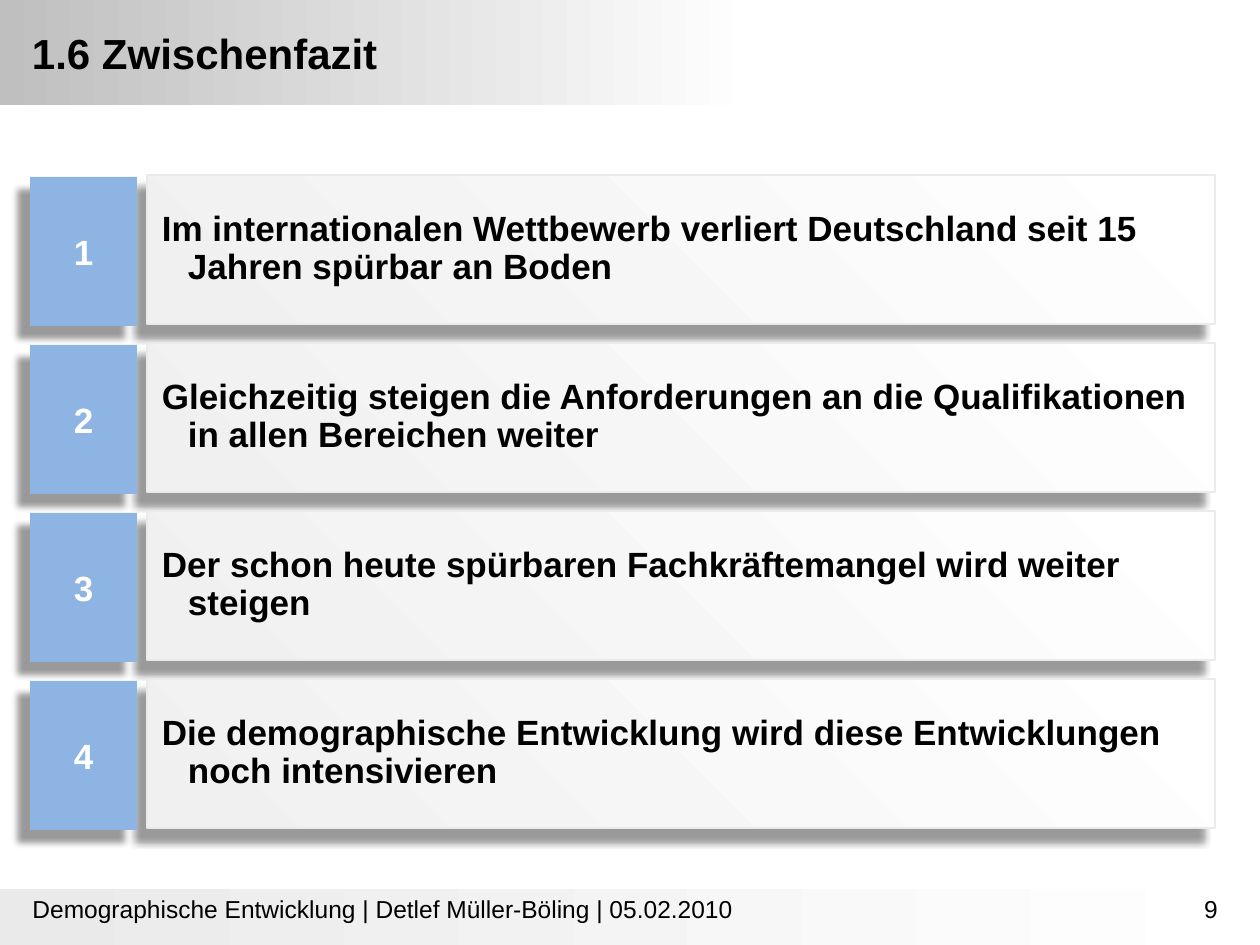
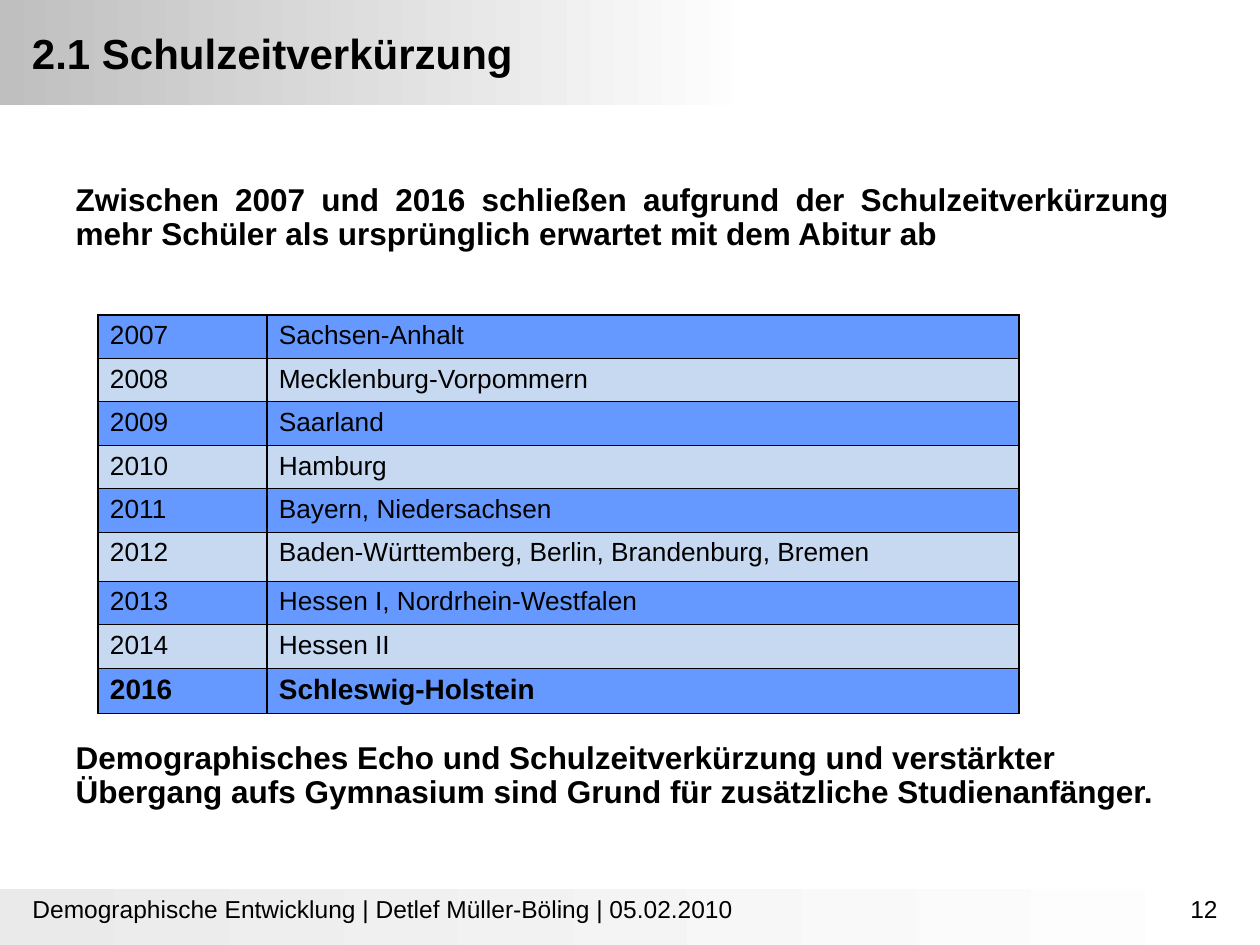
import pptx
import pptx.dml.color
import pptx.enum.shapes
import pptx.enum.text
import pptx.oxml
import pptx.oxml.ns
import pptx.util

EMU_PER_PX = 914400 / 126
FONT = "Arial"
COLORS = {
    "text": "000000",
    "white": "FFFFFF",
    "header": "BFBFBF",
    "footer": "EAEAEA",
    "panel": "F0F0F0",
    "panel_line": "EAEAEA",
    "badge": "8EB4E3",
    "row_dark": "6699FF",
    "row_light": "C6D9F1",
}
NAMESPACE = pptx.oxml.ns.nsdecls("a")
ALIGN = pptx.enum.text.PP_ALIGN
ANCHOR = pptx.enum.text.MSO_ANCHOR

FOOTER_TEXT = "Demographische Entwicklung | Detlef Müller-Böling | 05.02.2010"
CONCLUSIONS = [
    "Im internationalen Wettbewerb verliert Deutschland seit 15 Jahren spürbar an Boden",
    "Gleichzeitig steigen die Anforderungen an die Qualifikationen in allen Bereichen weiter",
    "Der schon heute spürbaren Fachkräftemangel wird weiter steigen",
    "Die demographische Entwicklung wird diese Entwicklungen noch intensivieren",
]
INTRODUCTION = (
    "Zwischen 2007 und 2016 schließen aufgrund der Schulzeitverkürzung "
    "mehr Schüler als ursprünglich erwartet mit dem Abitur ab"
)
SUMMARY = (
    "Demographisches Echo und Schulzeitverkürzung und verstärkter "
    "Übergang aufs Gymnasium sind Grund für zusätzliche Studienanfänger."
)
GRADUATION_YEARS = [
    ("2007", "Sachsen-Anhalt"),
    ("2008", "Mecklenburg-Vorpommern"),
    ("2009", "Saarland"),
    ("2010", "Hamburg"),
    ("2011", "Bayern, Niedersachsen"),
    ("2012", "Baden-Württemberg, Berlin, Brandenburg, Bremen"),
    ("2013", "Hessen I, Nordrhein-Westfalen"),
    ("2014", "Hessen II"),
    ("2016", "Schleswig-Holstein"),
]


def px(length):
    return pptx.util.Emu(round(length * EMU_PER_PX))


def rgb(name):
    return pptx.dml.color.RGBColor.from_string(COLORS[name])


def place(shape, box):
    shape.left, shape.top, shape.width, shape.height = map(px, box)


def set_margins(target, left, top, right, bottom):
    """Set the insets of a text frame or a table cell."""
    target.margin_left, target.margin_top = px(left), px(top)
    target.margin_right, target.margin_bottom = px(right), px(bottom)


def set_indent(paragraph, left, first):
    properties = paragraph._p.get_or_add_pPr()
    properties.set("marL", str(px(left)))
    properties.set("indent", str(px(first)))


def format_paragraph(paragraph, size, bold=False, color="text", align=ALIGN.LEFT):
    paragraph.alignment = align
    for run in paragraph.runs:
        run.font.name = FONT
        run.font.size = pptx.util.Pt(size)
        run.font.bold = bold
        run.font.color.rgb = rgb(color)


def fill_gradient(shape, start, end, angle, start_position=0):
    shape.fill.gradient()
    shape.fill.gradient_angle = angle
    first, last = shape.fill.gradient_stops
    first.color.rgb, last.color.rgb = rgb(start), rgb(end)
    first.position, last.position = start_position, 1


def add_rectangle(slide, box):
    shape = slide.shapes.add_shape(
        pptx.enum.shapes.MSO_SHAPE.RECTANGLE, *map(px, box))
    shape.shadow.inherit = False
    shape.line.fill.background()
    return shape


def add_drop_shadow(shape):
    effects = shape.element.spPr.find(pptx.oxml.ns.qn("a:effectLst"))
    effects.append(pptx.oxml.parse_xml(
        f'<a:outerShdw {NAMESPACE} blurRad="50800" dist="127000" dir="8100000" '
        'algn="tr" rotWithShape="0"><a:srgbClr val="000000">'
        '<a:alpha val="40000"/></a:srgbClr></a:outerShdw>'))


def move_bands_to_master(presentation, slide):
    """Draw the header and footer bands and hand them to the slide master."""
    header = add_rectangle(slide, (0, 0, 1260, 105))
    fill_gradient(header, "white", "header", 180, 0.4)
    footer = add_rectangle(slide, (0, 889, 1260, 56))
    fill_gradient(footer, "white", "footer", 180)
    for index, band in enumerate((header, footer)):
        band.element.nvSpPr.cNvPr.set("id", str(100 + index))
        presentation.slide_master.shapes.element.insert(2 + index, band.element)


def add_label(slide, box, text, align):
    label = slide.shapes.add_textbox(*map(px, box))
    label.text_frame.word_wrap = True
    label.text_frame.text = text
    format_paragraph(label.text_frame.paragraphs[0], 14, align=align)


def add_frame(slide, title, number):
    """Set the title, the footer text and the slide number."""
    place(slide.shapes.title, (20, 20, 1043, 88))
    frame = slide.shapes.title.text_frame
    frame.text = title
    frame.auto_size = pptx.enum.text.MSO_AUTO_SIZE.NONE
    frame.vertical_anchor = ANCHOR.TOP
    set_margins(frame, 12, 8, 12, 6)
    format_paragraph(frame.paragraphs[0], 24, bold=True)
    add_label(slide, (20, 888, 863, 66), FOOTER_TEXT, ALIGN.LEFT)
    add_label(slide, (936, 888, 294, 66), number, ALIGN.RIGHT)


def add_conclusion(slide, box, number, text):
    """Place a text panel with its number badge inside the box."""
    left, top, width, height = box
    badge_width, gap = 107, 10
    panel_offset = badge_width + gap
    panel = add_rectangle(
        slide, (left + panel_offset, top, width - panel_offset, height))
    fill_gradient(panel, "panel", "white", 45)
    panel.line.color.rgb = rgb("panel_line")
    panel.line.width = pptx.util.Pt(1.5)
    badge = add_rectangle(slide, (left, top + 2, badge_width, height))
    badge.fill.solid()
    badge.fill.fore_color.rgb = rgb("badge")

    for shape, content in ((panel, text), (badge, number)):
        add_drop_shadow(shape)
        shape.text_frame.word_wrap = True
        shape.text_frame.vertical_anchor = ANCHOR.MIDDLE
        shape.text_frame.text = content
    set_margins(panel.text_frame, 15, 5, 5, 5)
    set_margins(badge.text_frame, 0, 0, 0, 0)
    paragraph = panel.text_frame.paragraphs[0]
    set_indent(paragraph, 26, -26)
    paragraph.line_spacing = 0.9
    format_paragraph(paragraph, 20, bold=True)
    format_paragraph(badge.text_frame.paragraphs[0], 20, True, "white", ALIGN.CENTER)


def add_statements(slide, box):
    """Put the statements above and below the table into the body."""
    body = slide.placeholders[1]
    place(body, box)
    frame = body.text_frame
    frame.auto_size = pptx.enum.text.MSO_AUTO_SIZE.NONE
    frame.text = f"{INTRODUCTION}\n{SUMMARY}"
    for paragraph, align, gap in zip(
            frame.paragraphs, (ALIGN.JUSTIFY, ALIGN.LEFT), (0, 280)):
        set_indent(paragraph, 0, 0)
        paragraph.line_spacing = 0.9
        paragraph.space_before = pptx.util.Pt(gap)
        paragraph._p.get_or_add_pPr().append(
            pptx.oxml.parse_xml(f"<a:buNone {NAMESPACE}/>"))
        format_paragraph(paragraph, 18, bold=True, align=align)


def set_borders(cell, widths):
    """Draw black borders, with widths in points for each side."""
    properties = cell._tc.get_or_add_tcPr()
    for side, width in widths.items():
        properties.append(pptx.oxml.parse_xml(
            f'<a:ln{side} {NAMESPACE} w="{pptx.util.Pt(width)}"><a:solidFill>'
            f'<a:srgbClr val="{COLORS["text"]}"/></a:solidFill></a:ln{side}>'))


def add_year_table(slide, left, top):
    column_widths = (169, 752)
    row_heights = [49 if year == "2012" else 42 for year, _ in GRADUATION_YEARS]
    table = slide.shapes.add_table(
        len(row_heights), len(column_widths), px(left), px(top),
        px(sum(column_widths)), px(sum(row_heights))).table
    table.first_row = table.horz_banding = False
    for column, width in zip(table.columns, column_widths):
        column.width = px(width)
    last = len(row_heights) - 1
    for row_index, values in enumerate(GRADUATION_YEARS):
        table.rows[row_index].height = px(row_heights[row_index])
        for column_index, value in enumerate(values):
            cell = table.cell(row_index, column_index)
            set_borders(cell, {
                "L": 1 if column_index == 0 else 0.75,
                "R": 1 if column_index == 1 else 0.75,
                "T": 1 if row_index == 0 else 0.75,
                "B": 1 if row_index == last else 0.75,
            })
            cell.fill.solid()
            cell.fill.fore_color.rgb = rgb("row_light" if row_index % 2 else "row_dark")
            set_margins(cell, 12, 6, 12, 6)
            cell.text_frame.text = value
            paragraph = cell.text_frame.paragraphs[0]
            set_indent(paragraph, 48, -48)
            is_last = row_index == last
            format_paragraph(paragraph, 16 if is_last else 15, bold=is_last)


def build_conclusions(slide):
    add_frame(slide, "1.6 Zwischenfazit", "9")
    for index, text in enumerate(CONCLUSIONS):
        add_conclusion(slide, (30, 175 + 168 * index, 1185, 149), str(index + 1), text)


def build_school_years(slide):
    add_frame(slide, "2.1 Schulzeitverkürzung", "12")
    add_statements(slide, (63, 178, 1119, 673))
    add_year_table(slide, 98, 315)


def main():
    presentation = pptx.Presentation()
    presentation.slide_width, presentation.slide_height = px(1260), px(945)
    layouts = presentation.slide_layouts
    conclusions = presentation.slides.add_slide(layouts.get_by_name("Title Only"))
    move_bands_to_master(presentation, conclusions)
    build_conclusions(conclusions)
    build_school_years(
        presentation.slides.add_slide(layouts.get_by_name("Title and Content")))
    presentation.save("out.pptx")


if __name__ == "__main__":
    main()
